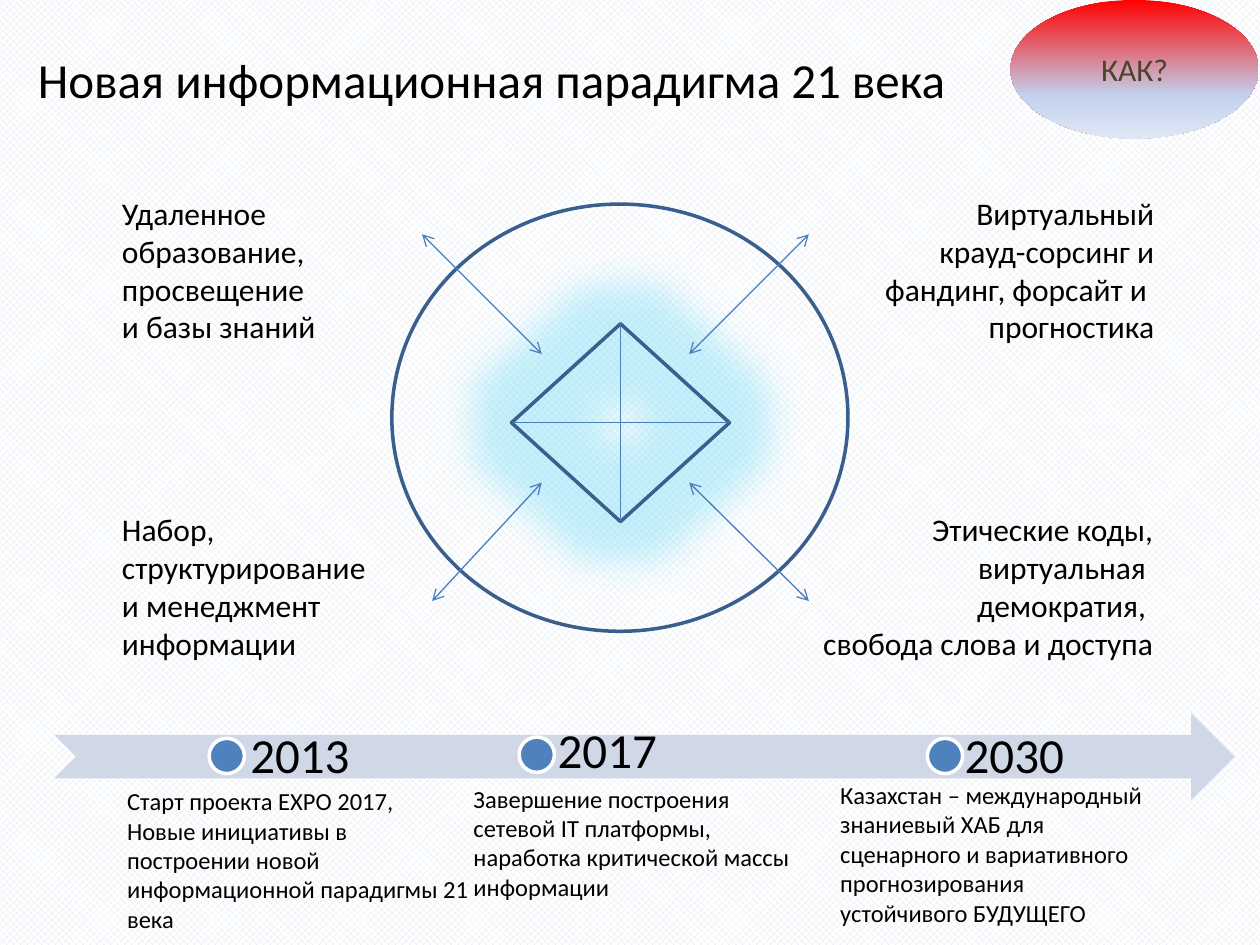
import copy

import pptx
import pptx.dml.color
import pptx.enum.dml
import pptx.enum.shapes
import pptx.enum.text
import pptx.oxml.ns
import pptx.oxml.xmlchemy
import pptx.util
from pptx.util import Inches

RGBColor = pptx.dml.color.RGBColor
SHAPE = pptx.enum.shapes.MSO_SHAPE
ANCHOR = pptx.enum.text.MSO_ANCHOR
ALIGN = pptx.enum.text.PP_ALIGN
OxmlElement = pptx.oxml.xmlchemy.OxmlElement
qn = pptx.oxml.ns.qn

BLACK = RGBColor(0x00, 0x00, 0x00)
WHITE = RGBColor(0xFF, 0xFF, 0xFF)
PALE_BLUE = RGBColor(0xDC, 0xE6, 0xF2)
ARROW_BLUE = RGBColor(0xD0, 0xD8, 0xE8)
DOT_BLUE = RGBColor(0x4F, 0x81, 0xBD)
OUTLINE_BLUE = RGBColor(0x3A, 0x5F, 0x8C)
LINE_BLUE = RGBColor(0x4B, 0x7E, 0xBC)
OLIVE = RGBColor(0x4A, 0x45, 0x2A)
GLOW = RGBColor(0x1B, 0xC6, 0xF0)
BADGE_STOPS = [
    (0, RGBColor(0xFF, 0x00, 0x00)),
    (0.69, RGBColor(0xC2, 0xD1, 0xED)),
    (1, RGBColor(0xE1, 0xE8, 0xF5)),
]

TOPICS = [
    (0.87, 1.49, 3.66, ALIGN.LEFT, "Удаленное\nобразование,\nпросвещение\nи базы знаний"),
    (6.5, 1.49, 2.76, ALIGN.RIGHT,
     "Виртуальный\nкрауд-сорсинг и фандинг, форсайт и \nпрогностика"),
    (0.87, 4, 2.76, ALIGN.LEFT, "Набор,\nструктурирование\nи менеджмент\nинформации"),
    (6.26, 4, 2.99, ALIGN.RIGHT,
     "Этические коды, виртуальная \nдемократия, \nсвобода слова и доступа"),
]
MILESTONES = [
    ("2013", 1.23, 0.2, 0.59, -0.34, ANCHOR.BOTTOM, (0.48, 0.53, 2.91),
     "Старт проекта EXPO 2017,\nНовые инициативы в построении новой "
     "информационной парадигмы 21 века"),
    ("2017", 3.69, 0.19, 3.03, -0.11, ANCHOR.TOP, (3.23, 0.51, 2.76),
     "Завершение построения сетевой IT платформы, "
     "наработка критической массы информации"),
    ("2030", 6.93, 0.2, 6.26, -0.34, ANCHOR.BOTTOM, (6.14, 0.48, 2.6),
     "Казахстан – международный знаниевый ХАБ для сценарного и вариативного "
     "прогнозирования устойчивого БУДУЩЕГО"),
]


def write(sp, text, size, align=ALIGN.LEFT, anchor=ANCHOR.TOP, color=BLACK):
    """Fill a shape with one formatted paragraph and return its text frame."""
    tf = sp.text_frame
    tf.word_wrap = True
    tf.vertical_anchor = anchor
    p = tf.paragraphs[0]
    p.text = text
    p.alignment = align
    p.font.name = "Calibri"
    p.font.size = pptx.util.Pt(size)
    p.font.color.rgb = color
    return tf


def add_text(s, box, text, size, **style):
    """Add a text box and return its text frame."""
    return write(s.shapes.add_textbox(*map(Inches, box)), text, size, **style)


def add_shape(s, kind, box, fill=None, line=None):
    """Add a preset shape with a plain fill and a 2 pt line, each optional."""
    sp = s.shapes.add_shape(kind, *map(Inches, box))
    sp.shadow.inherit = False
    if fill is None:
        sp.fill.background()
    else:
        sp.fill.solid()
        sp.fill.fore_color.rgb = fill
    if line is None:
        sp.line.fill.background()
    else:
        sp.line.color.rgb = line
        sp.line.width = pptx.util.Pt(2)
    return sp


def add_line(s, start, end, arrows=False):
    """Add a thin line, with open arrowheads at both ends if asked."""
    cx = s.shapes.add_connector(
        pptx.enum.shapes.MSO_CONNECTOR.STRAIGHT, *map(Inches, (*start, *end)))
    cx.line.color.rgb = LINE_BLUE
    cx.line.width = pptx.util.Pt(0.75)
    if arrows:
        ln = cx._element.spPr.find(qn("a:ln"))
        for tag in ("a:headEnd", "a:tailEnd"):
            end_mark = OxmlElement(tag)
            end_mark.set("type", "arrow")
            ln.append(end_mark)
    cx._element.spPr.append(OxmlElement("a:effectLst"))


def add_glow(sp, radius, color, alpha):
    """Put a soft glow around a shape."""
    glow = OxmlElement("a:glow")
    glow.set("rad", str(int(Inches(radius))))
    clr = OxmlElement("a:srgbClr")
    clr.set("val", str(color))
    opacity = OxmlElement("a:alpha")
    opacity.set("val", str(alpha * 1000))
    clr.append(opacity)
    glow.append(clr)
    sp._element.spPr.find(qn("a:effectLst")).append(glow)


def add_title(s, left, top, width, height):
    """Place and format the slide title."""
    sp = s.shapes.title
    sp.left, sp.top, sp.width, sp.height = map(Inches, (left, top, width, height))
    write(sp, "Новая информационная парадигма 21 века", 28, anchor=ANCHOR.MIDDLE)


def add_badge(s, left, top, width, height):
    """Draw the gradient oval with the question."""
    sp = add_shape(s, SHAPE.OVAL, (left, top, width, height))
    sp.fill.gradient()
    sp.fill.gradient_angle = 270
    stops = sp._element.spPr.find(qn("a:gradFill")).find(qn("a:gsLst"))
    stops.append(copy.deepcopy(stops[-1]))
    for stop, (position, color) in zip(sp.fill.gradient_stops, BADGE_STOPS):
        stop.position = position
        stop.color.rgb = color
    write(sp, "КАК?", 18, align=ALIGN.CENTER, anchor=ANCHOR.MIDDLE, color=OLIVE)


def add_timeline(s, left, top, width, height):
    """Draw the arrow with its dated milestones."""
    add_shape(s, SHAPE.NOTCHED_RIGHT_ARROW, (left, top, width, height), ARROW_BLUE)
    for year, dot_x, dot_y, year_x, year_y, anchor, note, text in MILESTONES:
        tf = add_text(s, (left + year_x, top + year_y, 2.72, 1.11), year, 28,
                      align=ALIGN.CENTER, anchor=anchor)
        tf.margin_left = tf.margin_right = Inches(0.22)
        tf.margin_top = tf.margin_bottom = Inches(0.22)
        tf.paragraphs[0].line_spacing = 0.9
        add_shape(s, SHAPE.OVAL, (left + dot_x, top + dot_y, 0.28, 0.28), DOT_BLUE, WHITE)
        note_x, note_y, note_w = note
        add_text(s, (left + note_x, top + note_y, note_w, 1.28), text, 14)


def add_diagram(s, left, top, width, height):
    """Draw the glowing diamond in its circle with four two-way arrows."""
    w, h = 1.73, 1.57
    x, y = left + 0.95, top + 0.95
    cx, cy = x + w / 2, y + h / 2
    diamond = add_shape(s, SHAPE.FLOWCHART_DECISION, (x, y, w, h), line=OUTLINE_BLUE)
    add_glow(diamond, 0.6, GLOW, 25)
    add_line(s, (cx, y + h), (cx, y))
    add_line(s, (x, cy), (x + w, cy))
    add_shape(s, SHAPE.OVAL, (left, top, width, height), line=OUTLINE_BLUE)
    for inner_x, outer_x, inner_y, outer_y in [
        (2.36, 3.31, 1.19, 0.24),
        (2.36, 3.31, 2.21, 3.15),
        (1.19, 0.24, 1.19, 0.24),
        (1.19, 0.32, 2.21, 3.15),
    ]:
        add_line(s, (left + inner_x, top + inner_y), (left + outer_x, top + outer_y), True)


def add_topics(s, height):
    """Write the four topics around the diagram."""
    for left, top, width, align, text in TOPICS:
        add_text(s, (left, top, width, height), text, 18, align=align)


def main():
    """Build the slide and save it."""
    prs = pptx.Presentation()
    prs.slide_width, prs.slide_height = Inches(10), Inches(7.5)
    s = prs.slides.add_slide(prs.slide_layouts[5])
    fill = s.background.fill
    fill.patterned()
    fill.pattern = pptx.enum.dml.MSO_PATTERN.OUTLINED_DIAMOND
    fill.fore_color.rgb = PALE_BLUE
    fill.back_color.rgb = WHITE
    add_title(s, 0.2, 0, 7.95, 1.25)
    add_badge(s, 8.02, 0, 1.97, 1.1)
    add_timeline(s, 0.43, 5.66, 9.37, 0.69)
    add_diagram(s, 3.11, 1.62, 3.62, 3.39)
    add_topics(s, 1.31)
    prs.save("out.pptx")


if __name__ == "__main__":
    main()
